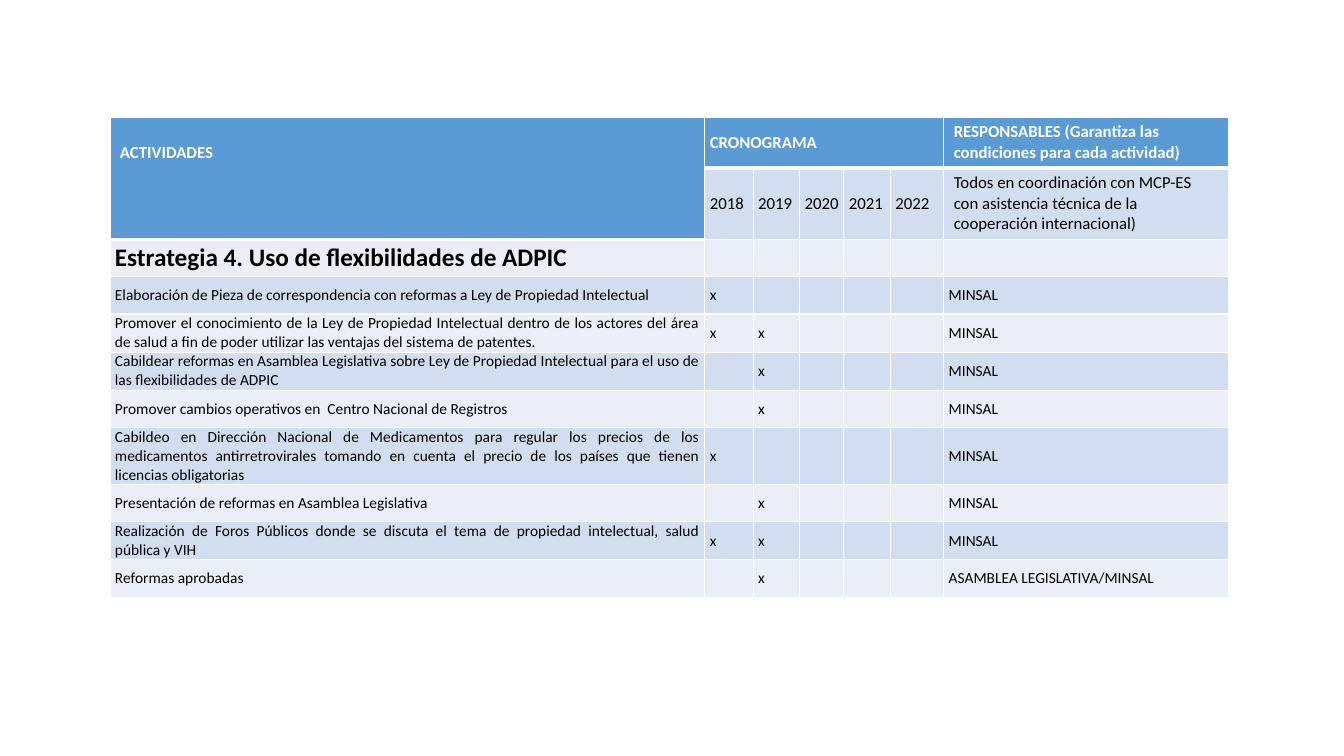
from dataclasses import dataclass
from lxml.etree import SubElement
from pptx import Presentation
from pptx.dml.color import RGBColor
from pptx.enum.text import MSO_ANCHOR, PP_ALIGN
from pptx.oxml.ns import qn
from pptx.util import Inches, Pt


@dataclass
class Theme:
    font: str = "Calibri"
    head: str = "5B9BD5"
    dark: str = "D2DEEF"
    light: str = "EAEFF7"
    white: str = "FFFFFF"
    black: str = "000000"
    small: int = 11
    mid: int = 12
    large: int = 18
    thin: int = 1
    thick: int = 3


THEME = Theme()

# Cell layouts
TIGHT = dict(margin_left=Inches(0.05), margin_right=Inches(0.05),
             margin_top=0, margin_bottom=0, vertical_anchor=MSO_ANCHOR.MIDDLE)
ROOMY = dict(margin_left=Inches(0.1), margin_right=Inches(0.1),
             margin_top=Inches(0.05), margin_bottom=Inches(0.05),
             vertical_anchor=MSO_ANCHOR.TOP)
LOWER = ROOMY | dict(margin_top=Inches(0.25))

# Content: activity, years marked, body in charge
YEARS = range(2018, 2023)
TASKS = [
    ("Elaboración de Pieza de correspondencia con reformas a Ley de Propiedad Intelectual",
     [2018], "MINSAL"),
    ("Promover el conocimiento de la Ley de Propiedad Intelectual dentro de los actores "
     "del área de salud a fin de poder utilizar las ventajas del sistema de patentes.",
     [2018, 2019], "MINSAL"),
    ("Cabildear reformas en Asamblea Legislativa sobre Ley de Propiedad Intelectual "
     "para el uso de las flexibilidades de ADPIC", [2019], "MINSAL"),
    ("Promover cambios operativos en  Centro Nacional de Registros", [2019], "MINSAL"),
    ("Cabildeo en Dirección Nacional de Medicamentos para regular los precios de los "
     "medicamentos antirretrovirales tomando en cuenta el precio de los países que "
     "tienen licencias obligatorias", [2018], "MINSAL"),
    ("Presentación de reformas en Asamblea Legislativa", [2019], "MINSAL"),
    ("Realización de Foros Públicos donde se discuta el tema de propiedad intelectual, "
     "salud pública y VIH", [2018, 2019], "MINSAL"),
    ("Reformas aprobadas", [2019], "ASAMBLEA LEGISLATIVA/MINSAL"),
]
WIDTHS = [5.9, 0.48, 0.46, 0.44, 0.46, 0.53, 2.83]
HEIGHTS = [0.49, 0.7] + [0.37] * 5 + [0.55] + [0.37] * 3


def assign(item, values):
    for name, value in values.items():
        setattr(item, name, value)


class Deck:
    def __init__(self, theme):
        self.theme = theme
        self.deck = Presentation()
        assign(self.deck, dict(slide_width=Inches(13.33), slide_height=Inches(7.5)))
        self.slide = self.deck.slides.add_slide(self.deck.slide_layouts[6])

    def table(self, left, top, widths, heights):
        frame = self.slide.shapes.add_table(
            len(heights), len(widths), Inches(left), Inches(top),
            Inches(sum(widths)), Inches(sum(heights)))
        grid = frame.table
        assign(grid, dict(first_row=False, horz_banding=False))
        for col, width in zip(grid.columns, widths):
            col.width = Inches(width)
        for row, height in zip(grid.rows, heights):
            row.height = Inches(height)
        return grid

    def edges(self, cell, base):
        props = cell._tc.get_or_add_tcPr()
        for tag in ("a:lnL", "a:lnR", "a:lnT", "a:lnB"):
            width = base if tag == "a:lnB" else self.theme.thin
            line = SubElement(props, qn(tag), w=str(Pt(width)))
            fill = SubElement(line, qn("a:solidFill"))
            SubElement(fill, qn("a:srgbClr"), val=self.theme.white)

    def paint(self, cell, fill, base):
        self.edges(cell, base)
        cell.fill.solid()
        cell.fill.fore_color.rgb = RGBColor.from_string(fill)
        assign(cell, TIGHT)

    def label(self, cell, text, size, color=None, bold=False,
              align=PP_ALIGN.JUSTIFY, layout=TIGHT):
        assign(cell, layout)
        para = cell.text_frame.paragraphs[0]
        para.alignment = align
        run = para.add_run()
        run.text = text
        assign(run.font, dict(name=self.theme.font, size=Pt(size), bold=bold))
        run.font.color.rgb = RGBColor.from_string(color or self.theme.black)


def main():
    look = THEME
    page = Deck(look)
    grid = page.table(1.09, 1.16, WIDTHS, HEIGHTS)
    last = len(WIDTHS) - 1

    # Fills and borders
    for row in range(len(HEIGHTS)):
        for col in range(len(WIDTHS)):
            head = row == 0 or (row == 1 and col == 0)
            band = look.dark if row % 2 else look.light
            page.paint(grid.cell(row, col), look.head if head else band,
                       look.thick if head else look.thin)
    grid.cell(0, 0).merge(grid.cell(1, 0))
    grid.cell(0, 1).merge(grid.cell(0, last - 1))

    # Header rows
    for col, text, layout in [
        (0, "ACTIVIDADES", LOWER),
        (1, "CRONOGRAMA", TIGHT),
        (last, "RESPONSABLES (Garantiza las condiciones para cada actividad)", ROOMY),
    ]:
        page.label(grid.cell(0, col), text, look.mid, look.white, True,
                   PP_ALIGN.LEFT, layout)
    for col, year in enumerate(YEARS, 1):
        page.label(grid.cell(1, col), str(year), look.mid)
    page.label(grid.cell(1, last), "Todos en coordinación con MCP-ES con asistencia "
               "técnica de la cooperación internacional)", look.mid,
               align=PP_ALIGN.LEFT, layout=ROOMY)

    # Strategy row
    page.label(grid.cell(2, 0), "Estrategia 4. Uso de flexibilidades de ADPIC",
               look.large, bold=True)

    # Activity rows
    for row, (task, marks, owner) in enumerate(TASKS, 3):
        page.label(grid.cell(row, 0), task, look.small)
        for year in marks:
            page.label(grid.cell(row, 1 + YEARS.index(year)), "x", look.small)
        page.label(grid.cell(row, last), owner, look.small)

    page.deck.save("out.pptx")


if __name__ == "__main__":
    main()
